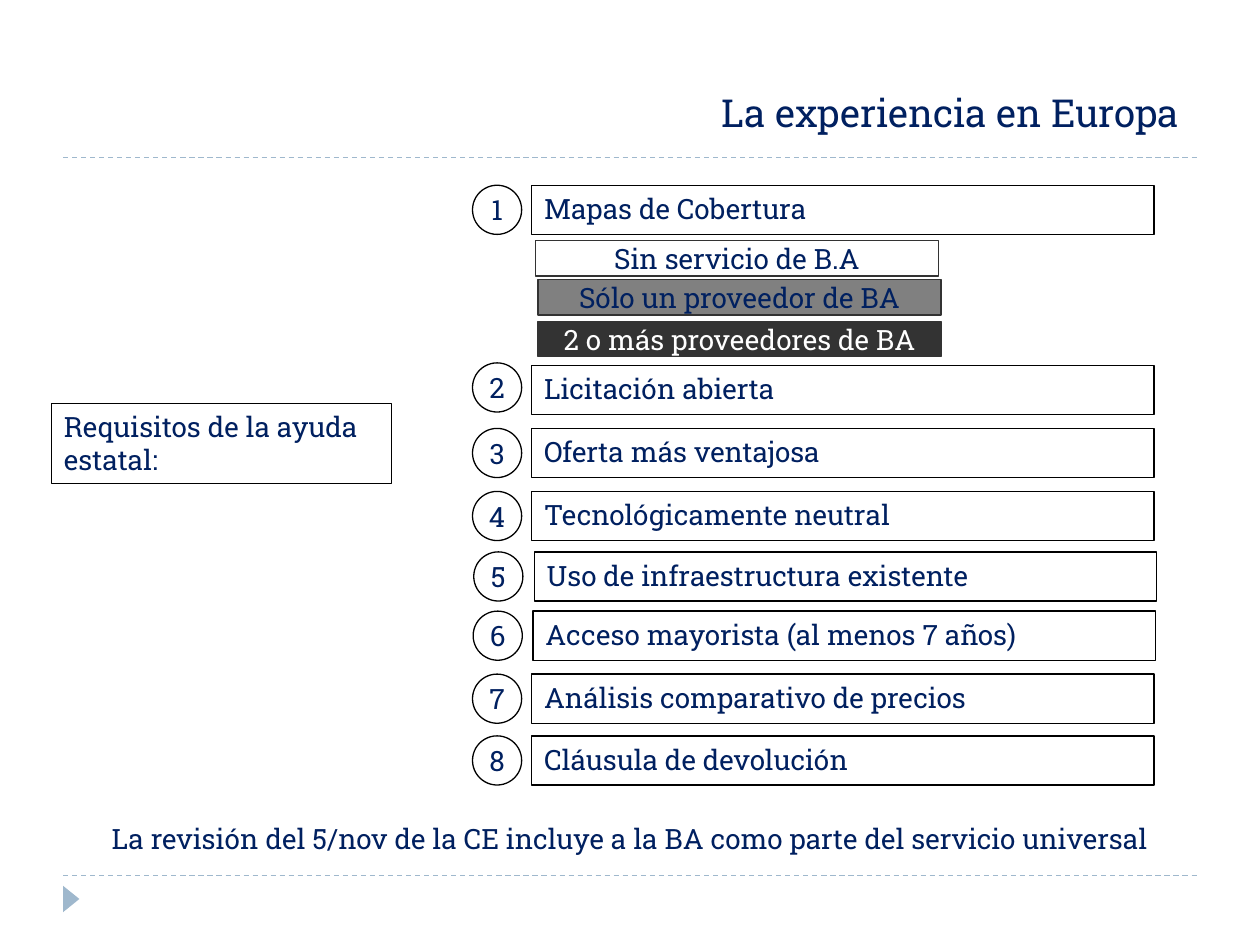
from dataclasses import dataclass

from lxml import etree
from pptx import Presentation
from pptx import util as u
from pptx.dml.color import RGBColor
from pptx.enum import dml, shapes, text

NAVY, BLACK, WHITE, DARK, PALE = "002060", "000000", "FFFFFF", "333333", "9FB8CD"
FONT = "Roboto Slab"
LEFT, MID, RIGHT = text.PP_ALIGN.LEFT, text.PP_ALIGN.CENTER, text.PP_ALIGN.RIGHT
TOP, CORE, BASE = text.MSO_ANCHOR.TOP, text.MSO_ANCHOR.MIDDLE, text.MSO_ANCHOR.BOTTOM
RECT, OVAL = shapes.MSO_SHAPE.RECTANGLE, shapes.MSO_SHAPE.OVAL
SIDE = 0.39


@dataclass
class Item:
    words: str
    top: float
    shift: float = 0
    lift: float = 0


@dataclass
class Zone:
    words: str
    left: float
    top: float
    fill: str
    ink: str


ITEMS = [
    Item("Mapas de Cobertura", 1.47),
    Item("Licitación abierta", 2.9, lift=0.02),
    Item("Oferta más ventajosa", 3.4),
    Item("Tecnológicamente neutral", 3.9),
    Item("Uso de infraestructura existente", 4.38, 0.02),
    Item("Acceso mayorista (al menos 7 años)", 4.85, 0.01),
    Item("Análisis comparativo de precios", 5.35),
    Item("Cláusula de devolución", 5.84),
]
ZONES = [
    Zone("Sin servicio de B.A", 4.25, 1.91, WHITE, NAVY),
    Zone("Sólo un proveedor de BA", 4.27, 2.22, "808080", NAVY),
    Zone("2 o más proveedores de BA", 4.27, 2.55, DARK, WHITE),
]


def tint(part, code: str) -> None:
    part.rgb = RGBColor.from_string(code)


def apply(part, style: dict) -> None:
    for name, value in style.items():
        setattr(part, name, value)


def write(shape, words: str, ink: str = NAVY, size: float = 16,
          align=LEFT, **style) -> None:
    frame = shape.text_frame
    apply(frame, {"word_wrap": True, "vertical_anchor": TOP} | style)
    para = frame.paragraphs[0]
    para.alignment = align
    run = para.add_run()
    run.text = words
    apply(run.font, {"name": FONT, "size": u.Pt(size)})
    tint(run.font.color, ink)


def draw(slide, kind, box: tuple, fill: str | None = None, edge: str | None = None):
    shape = slide.shapes.add_shape(kind, *map(u.Inches, box))
    shape.shadow.inherit = False
    if fill:
        shape.fill.solid()
        tint(shape.fill.fore_color, fill)
    else:
        shape.fill.background()
    if edge:
        tint(shape.line.color, edge)
        shape.line.width = u.Pt(0.75)
    else:
        shape.line.fill.background()
    return shape


def rule(slide, top: float) -> None:
    ends = map(u.Inches, (0.5, top, 9.5, top))
    line = slide.shapes.add_connector(shapes.MSO_CONNECTOR.STRAIGHT, *ends)
    tint(line.line.color, PALE)
    apply(line.line, {"width": u.Pt(0.75), "dash_style": dml.MSO_LINE.DASH})
    space = "http://schemas.openxmlformats.org/drawingml/2006/main"
    etree.SubElement(line._element.spPr, f"{{{space}}}effectLst")


def label(slide, box: tuple, words: str, **style) -> None:
    write(slide.shapes.add_textbox(*map(u.Inches, box)), words, **style)


def entry(slide, rank: int, item: Item) -> None:
    disc = draw(slide, OVAL, (3.75 + item.shift / 2, item.top - item.lift, SIDE, SIDE),
                WHITE, BLACK)
    write(disc, str(rank), align=MID, vertical_anchor=CORE, word_wrap=False)
    bar = draw(slide, RECT, (4.22 + item.shift, item.top, 4.94, SIDE), edge=BLACK)
    write(bar, item.words)


def band(slide, zone: Zone) -> None:
    shape = draw(slide, RECT, (zone.left, zone.top, 3.2, 0.28), zone.fill, DARK)
    write(shape, zone.words, zone.ink, align=MID, vertical_anchor=CORE)


def main() -> None:
    deck = Presentation()
    apply(deck, {"slide_width": u.Inches(10), "slide_height": u.Inches(7.5)})
    slide = deck.slides.add_slide(deck.slide_layouts[6])
    for top in (6.95, 1.25):
        rule(slide, top)
    mark = draw(slide, shapes.MSO_SHAPE.ISOSCELES_TRIANGLE, (0.46, 7.07, 0.21, 0.13), PALE)
    mark.rotation = 90
    label(slide, (0.51, 0.44, 8.95, 0.63), "La experiencia en Europa",
          size=22, align=RIGHT, vertical_anchor=BASE, margin_bottom=0)
    need = draw(slide, RECT, (0.41, 3.2, 2.7, 0.64), edge=BLACK)
    write(need, "Requisitos de la ayuda estatal:")
    for zone in ZONES:
        band(slide, zone)
    for rank, item in enumerate(ITEMS, 1):
        entry(slide, rank, item)
    label(slide, (0, 6.47, 10, 0.37),
          "La revisión del 5/nov de la CE incluye a la BA como parte del servicio universal",
          align=MID)
    deck.save("out.pptx")


if __name__ == "__main__":
    main()
